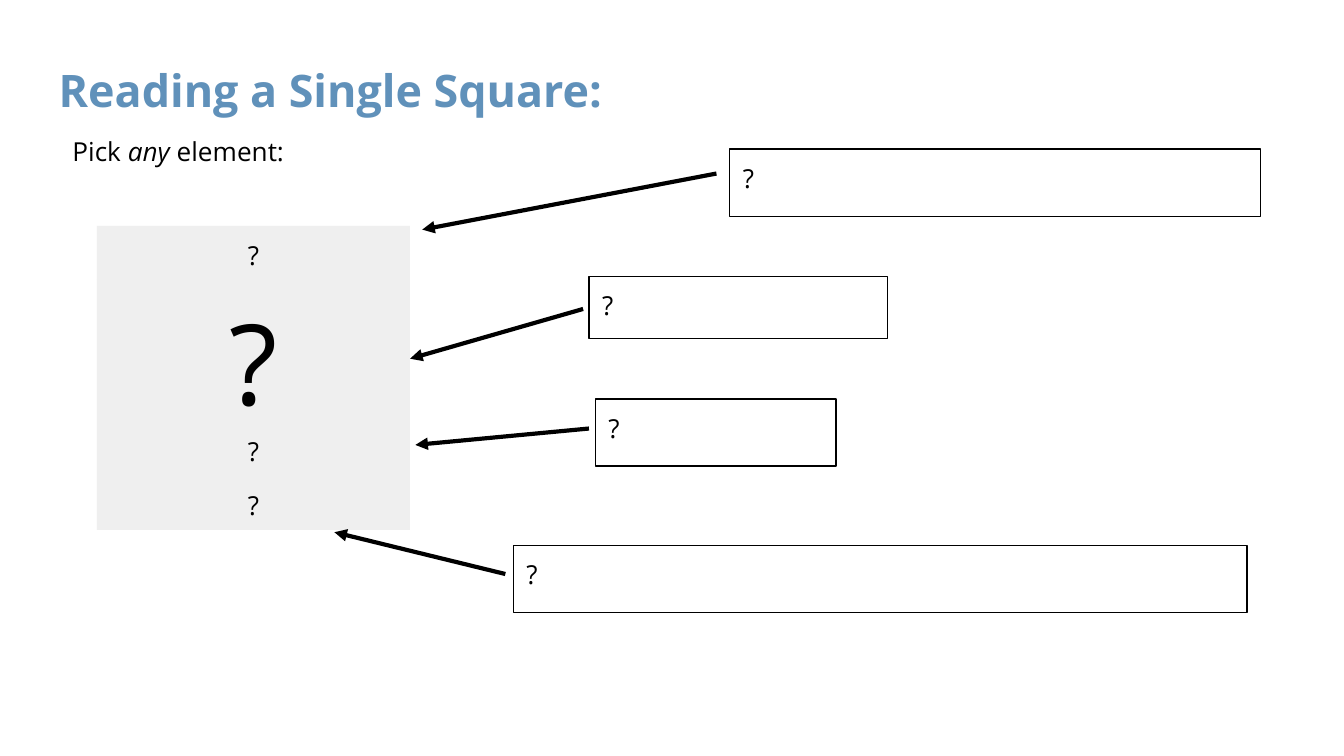
from lxml.etree import SubElement
from pptx import Presentation
from pptx.dml.color import RGBColor
from pptx.enum.shapes import MSO_CONNECTOR, MSO_SHAPE
from pptx.enum.text import MSO_ANCHOR, PP_ALIGN
from pptx.oxml.ns import qn
from pptx.util import Cm, Pt

COLORS = {"heading": "6091BA", "ink": "000000", "tile": "EFEFEF"}
FONT = "Open Sans"
BODY_SIZE = 14

# Element square: left edge, top edge and width in cm
SQUARE_LEFT, SQUARE_TOP, SQUARE_WIDTH = 1.83, 4.27, 5.92
# Height in cm and text size of each tile, from the top down
TILES = [(1.02, BODY_SIZE), (2.69, 60), (1.02, BODY_SIZE), (1.02, BODY_SIZE)]

# Answer box (left, top, width, height), then arrow start and end, in cm
CALLOUTS = [
    ((13.79, 2.82, 10.03, 1.27), (13.54, 3.28), (7.98, 4.34)),
    ((11.13, 5.23, 5.64, 1.17), (11.02, 5.84), (7.75, 6.78)),
    ((11.25, 7.54, 4.55, 1.27), (11.13, 8.1), (7.85, 8.41)),
    ((9.7, 10.31, 13.87, 1.27), (9.55, 10.85), (6.32, 10.06)),
]


def color(name):
    return RGBColor.from_string(COLORS[name])


def set_text(shape, pieces, size, ink="ink", align=PP_ALIGN.LEFT, bold=False):
    """Write (text, italic) pieces as one paragraph."""
    frame = shape.text_frame
    frame.word_wrap = True
    frame.vertical_anchor = MSO_ANCHOR.TOP
    frame.margin_left = frame.margin_right = Cm(0.25)
    frame.margin_top = frame.margin_bottom = Cm(0.25)
    paragraph = frame.paragraphs[0]
    paragraph.alignment = align
    for text, italic in pieces:
        run = paragraph.add_run()
        run.text = text
        run.font.name = FONT
        run.font.size = Pt(size)
        run.font.bold = bold
        run.font.italic = italic
        run.font.color.rgb = color(ink)
    return paragraph


def add_label(slide, box, pieces, size, **style):
    label = slide.shapes.add_textbox(*map(Cm, box))
    return set_text(label, pieces, size, **style)


def add_box(slide, box):
    rectangle = slide.shapes.add_shape(MSO_SHAPE.RECTANGLE, *map(Cm, box))
    rectangle.shadow.inherit = False
    return rectangle


def add_tile(slide, box, size):
    tile = add_box(slide, box)
    tile.fill.solid()
    tile.fill.fore_color.rgb = color("tile")
    tile.line.fill.background()
    set_text(tile, [("?", False)], size, align=PP_ALIGN.CENTER)


def add_answer(slide, box):
    answer = add_box(slide, box)
    answer.fill.background()
    answer.line.color.rgb = color("ink")
    answer.line.width = Pt(0.75)
    set_text(answer, [("?", False)], BODY_SIZE)


def add_arrow(slide, start, end):
    arrow = slide.shapes.add_connector(
        MSO_CONNECTOR.STRAIGHT, *map(Cm, start + end))
    arrow.line.color.rgb = color("ink")
    arrow.line.width = Pt(2.25)
    SubElement(arrow.line._get_or_add_ln(), qn("a:tailEnd"), type="triangle")
    SubElement(arrow._element.spPr, qn("a:effectLst"))


def main():
    prs = Presentation()
    prs.slide_width, prs.slide_height = Cm(25.4), Cm(14.29)
    slide = prs.slides.add_slide(prs.slide_layouts[6])

    # Heading and instruction
    heading = add_label(slide, (0.86, 0.79, 24.1, 1.52),
                        [("Reading a Single Square:", False)], 24,
                        ink="heading", bold=True)
    heading.line_spacing = 1.15
    add_label(slide, (1.12, 2.31, 12.95, 1.12),
              [("Pick ", False), ("any", True), (" element:", False)],
              BODY_SIZE)

    # Element square, stacked from its tiles
    top = SQUARE_TOP
    for height, size in TILES:
        add_tile(slide, (SQUARE_LEFT, top, SQUARE_WIDTH, height), size)
        top += height

    # Answer boxes with arrows to the square
    for box, start, end in CALLOUTS:
        add_arrow(slide, start, end)
        add_answer(slide, box)

    prs.save("out.pptx")


if __name__ == "__main__":
    main()
